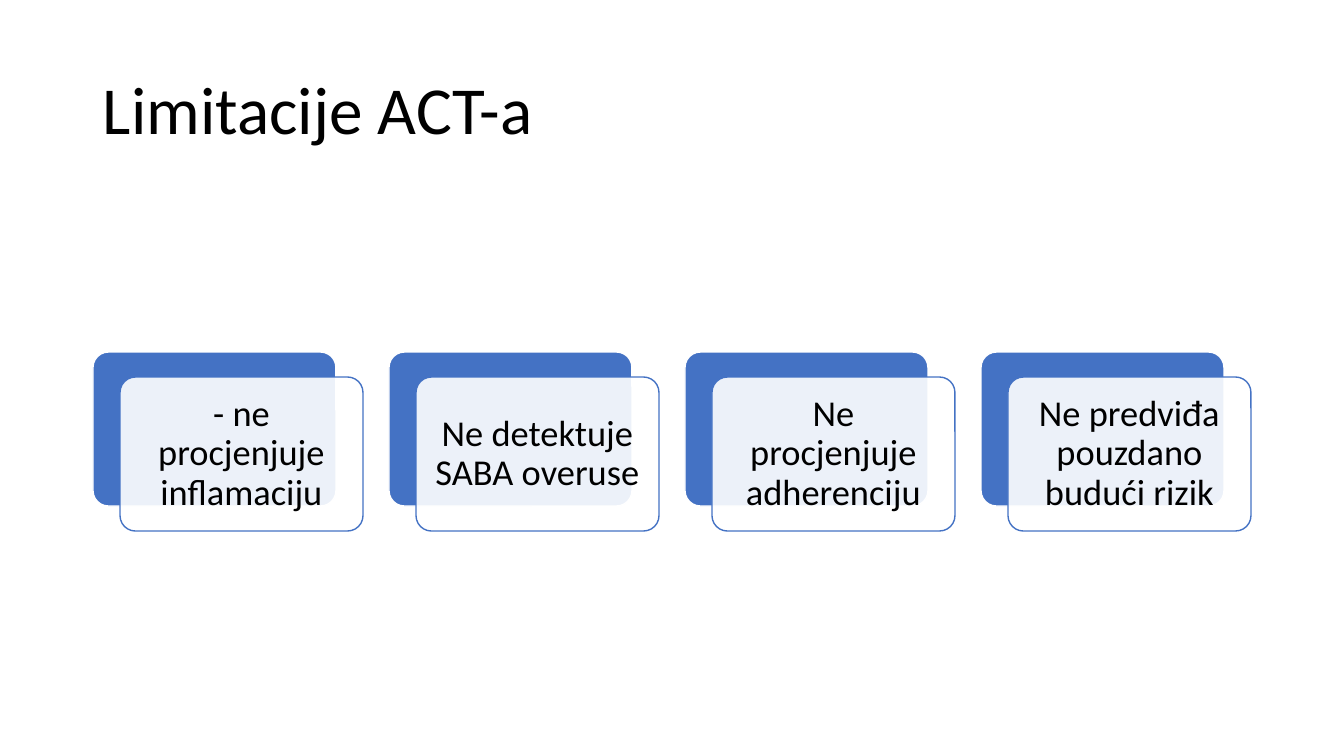
from dataclasses import dataclass

from lxml import etree
from pptx import Presentation, util as u
from pptx.dml.color import RGBColor
from pptx.enum import shapes, text
from pptx.oxml.ns import qn

PX_PER_INCH = 100.8
FONT = "Calibri"
BLACK, WHITE, BLUE = "000000", "FFFFFF", "4472C4"

CARD_LEFT, CARD_TOP = 93, 352
CARD_WIDTH, CARD_HEIGHT = 243, 154
CARD_PITCH = 296
FRONT_SHIFT_X, FRONT_SHIFT_Y = 27, 25
CARD_INSET = 11

LIMITATIONS = [
    "- ne procjenjuje inflamaciju",
    "Ne detektuje SABA overuse",
    "Ne procjenjuje adherenciju",
    "Ne predviđa pouzdano budući rizik",
]


@dataclass(frozen=True)
class Card:
    left: int
    top: int
    fill: str
    line: str
    opacity: int = 100
    label: str = ""


def px(length: int) -> int:
    return u.Inches(length / PX_PER_INCH)


def colour(value: str) -> RGBColor:
    return RGBColor.from_string(value)


def write(box, content: str, *, size: int, align=text.PP_ALIGN.LEFT, inset: int | None = None) -> None:
    frame = box.text_frame
    frame.word_wrap = True
    frame.vertical_anchor = text.MSO_ANCHOR.MIDDLE
    if inset is not None:
        frame.margin_left = frame.margin_right = px(inset)
        frame.margin_top = frame.margin_bottom = px(inset)
    para = frame.paragraphs[0]
    para.alignment = align
    para.line_spacing = 0.9
    span = para.add_run()
    span.text = content
    span.font.name = FONT
    span.font.size = u.Pt(size)
    span.font.color.rgb = colour(BLACK)


def draw_card(page, card: Card) -> None:
    box = page.shapes.add_shape(
        shapes.MSO_SHAPE.ROUNDED_RECTANGLE,
        px(card.left), px(card.top), px(CARD_WIDTH), px(CARD_HEIGHT),
    )
    box.adjustments[0] = 0.1
    box.shadow.inherit = False
    box.fill.solid()
    box.fill.fore_color.rgb = colour(card.fill)
    box.line.color.rgb = colour(card.line)
    box.line.width = u.Pt(1)
    if card.opacity < 100:
        tint = box.fill._xPr.find(qn("a:solidFill"))[0]
        etree.SubElement(tint, qn("a:alpha"), val=str(card.opacity * 1000))
    if card.label:
        write(box, card.label, size=26, align=text.PP_ALIGN.CENTER, inset=CARD_INSET)


def main() -> None:
    deck = Presentation()
    deck.slide_width, deck.slide_height = px(1344), px(756)
    page = deck.slides.add_slide(deck.slide_layouts[6])

    title = page.shapes.add_textbox(px(93), px(40), px(1159), px(146))
    write(title, "Limitacije ACT-a", size=48)

    for index, label in enumerate(LIMITATIONS):
        left = CARD_LEFT + index * CARD_PITCH
        draw_card(page, Card(left, CARD_TOP, BLUE, WHITE))
        draw_card(page, Card(left + FRONT_SHIFT_X, CARD_TOP + FRONT_SHIFT_Y, WHITE, BLUE, 90, label))

    deck.save("out.pptx")


if __name__ == "__main__":
    main()
